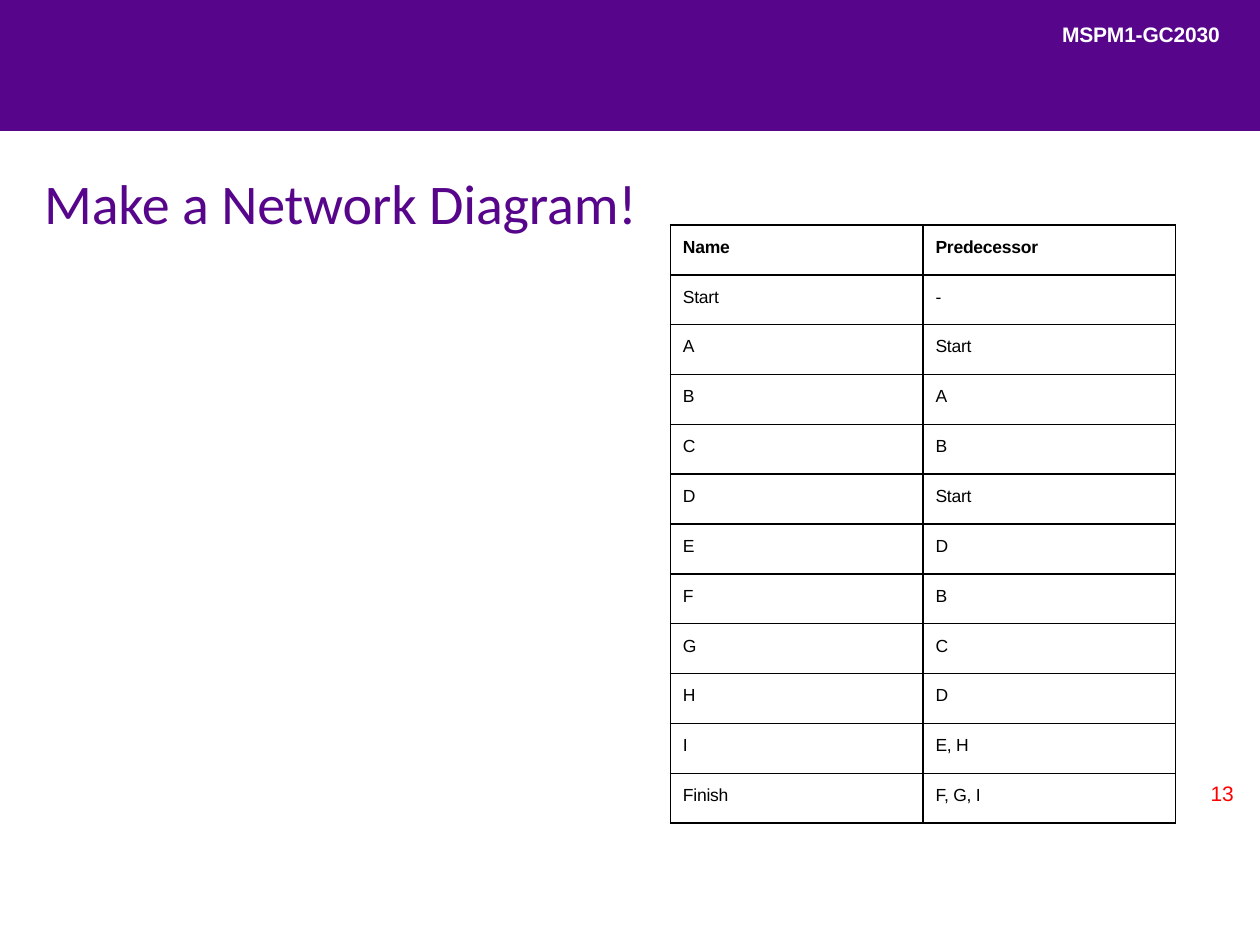
"""Build the network diagram exercise slide."""
from dataclasses import dataclass

from lxml.etree import SubElement as Sub
from pptx import Presentation
from pptx.dml.color import RGBColor as Rgb
from pptx.enum.shapes import MSO_SHAPE as Kind
from pptx.enum.text import MSO_ANCHOR as Anchor, MSO_AUTO_SIZE as Fit, PP_ALIGN as Align
from pptx.oxml.ns import qn
from pptx.util import Inches, Pt

WIDE, HIGH = Inches(10), Inches(7.5)
HUES = {"brand": "57068C", "page": "FFFFFF", "ink": "000000", "mark": "FF0000"}
TASKS = [
    ("Name", "Predecessor"),
    ("Start", "-"),
    ("A", "Start"),
    ("B", "A"),
    ("C", "B"),
    ("D", "Start"),
    ("E", "D"),
    ("F", "B"),
    ("G", "C"),
    ("H", "D"),
    ("I", "E, H"),
    ("Finish", "F, G, I"),
]


@dataclass(frozen=True)
class Box:
    """A place on the slide, in percent of its width and height."""
    left: float
    top: float
    width: float
    height: float

    def spans(self) -> tuple[int, int, int, int]:
        """Give the place in slide units."""
        return (int(WIDE * self.left / 100), int(HIGH * self.top / 100),
                int(WIDE * self.width / 100), int(HIGH * self.height / 100))


BANNER = Box(0, 0, 100, 13.87)
CODE = Box(84.2, 2.13, 13, 2.93)
PAGE = Box(95.1, 82.67, 3.3, 2.67)
TITLE = Box(3.4, 17.73, 48, 7.47)
TABLE = Box(53.2, 23.8, 40.1, 63.33)


def write(frame, text: str, size: float = 12, hue: str = "ink", font: str = "Arial",
          bold: bool = False, lead: float | None = None) -> None:
    """Put one formatted paragraph in a text frame."""
    para = frame.paragraphs[0]
    para.alignment = Align.LEFT
    para.space_before = Pt(0)
    if lead:
        para.line_spacing = Pt(lead)
    run = para.add_run()
    run.text = text
    run.font.size, run.font.name, run.font.bold = Pt(size), font, bold
    run.font.color.rgb = Rgb.from_string(HUES[hue])
    run.font._element.set("spc", "-10")


def place(shape, box: Box, inset: float = 0.01) -> None:
    """Move a text shape and set its frame."""
    shape.left, shape.top, shape.width, shape.height = box.spans()
    frame = shape.text_frame
    frame.word_wrap, frame.auto_size = True, Fit.NONE
    frame.vertical_anchor = Anchor.TOP
    frame.margin_left = frame.margin_top = Inches(inset)
    frame.margin_right = frame.margin_bottom = 0


def label(slide, box: Box, text: str, inset: float = 0.01, **form) -> None:
    """Add a text box with one line."""
    shape = slide.shapes.add_textbox(*box.spans())
    place(shape, box, inset)
    write(shape.text_frame, text, **form)


def rule(cell, width: float = 1) -> None:
    """Draw the four borders of a cell."""
    props = cell._tc.get_or_add_tcPr()
    for side in "LRTB":
        line = Sub(props, qn(f"a:ln{side}"), w=str(Pt(width)))
        Sub(Sub(line, qn("a:solidFill")), qn("a:srgbClr"), val=HUES["ink"])


def grid(slide, box: Box, rows: list[tuple[str, str]]) -> None:
    """Add the task table with equal rows and columns."""
    table = slide.shapes.add_table(len(rows), len(rows[0]), *box.spans()).table
    table.first_row = table.horz_banding = False
    for row, texts in enumerate(rows):
        for col, text in enumerate(texts):
            cell = table.cell(row, col)
            rule(cell)
            cell.fill.background()
            cell.vertical_anchor = Anchor.TOP
            cell.margin_left = cell.margin_top = Inches(0.1)
            cell.margin_right = cell.margin_bottom = 0
            write(cell.text_frame, text, size=10, bold=row == 0)


def main() -> None:
    """Build and save the slide."""
    deck = Presentation()
    deck.slide_width, deck.slide_height = WIDE, HIGH
    slide = deck.slides.add_slide(deck.slide_layouts[5])
    band = slide.shapes.add_shape(Kind.RECTANGLE, *BANNER.spans())
    band.shadow.inherit = False
    band.fill.solid()
    band.fill.fore_color.rgb = Rgb.from_string(HUES["brand"])
    band.line.fill.background()
    label(slide, CODE, "MSPM1-GC2030", hue="page", bold=True)
    label(slide, PAGE, "13", inset=0.1, hue="mark", lead=14.2)
    slide.shapes[-1].text_frame.margin_top = 0
    title = slide.shapes.title
    place(title, TITLE)
    write(title.text_frame, "Make a Network Diagram!", size=32, hue="brand", font="Calibri")
    grid(slide, TABLE, TASKS)
    deck.save("out.pptx")


if __name__ == "__main__":
    main()
